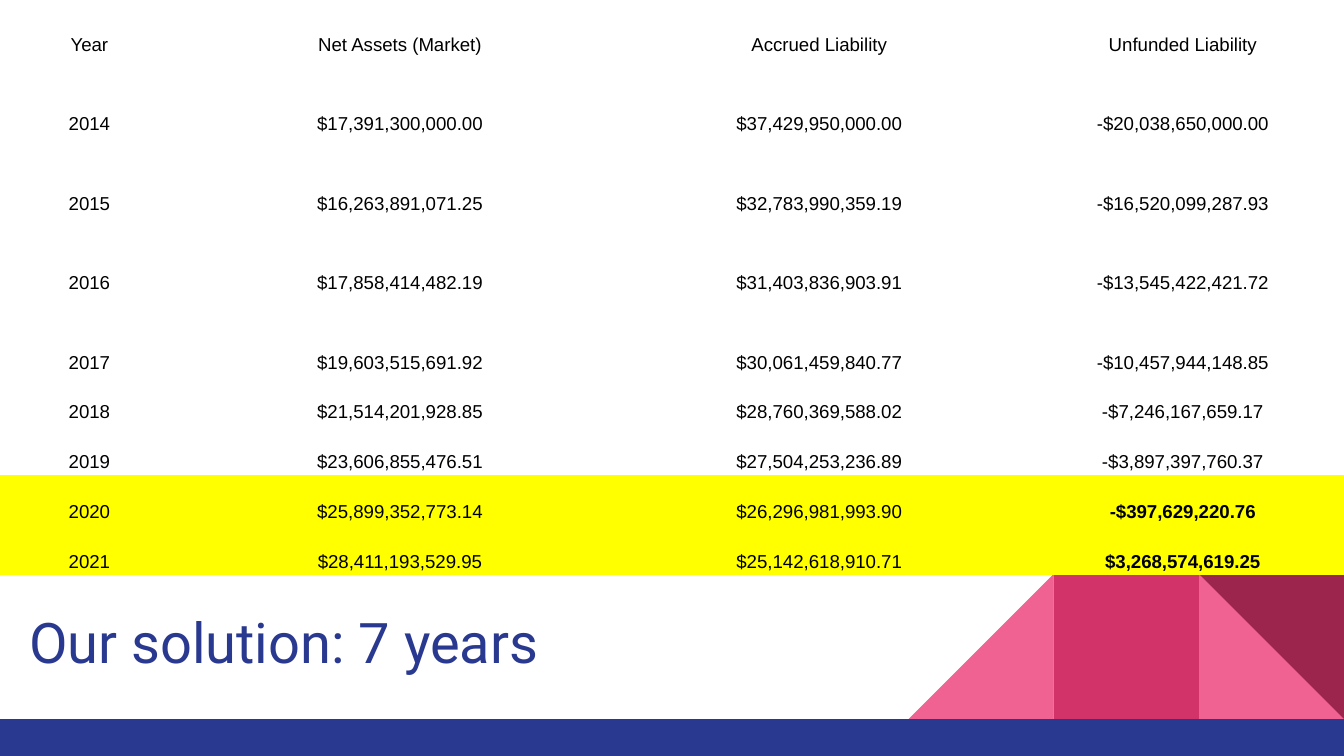
import pptx
import pptx.util
from pptx.dml.color import RGBColor
from pptx.enum.shapes import MSO_SHAPE
from pptx.enum.text import MSO_ANCHOR, PP_ALIGN
from pptx.util import Inches

COLORS = {
    "background": "FFFFFF",
    "navy": "2A3990",
    "pink": "F06292",
    "rose": "D23369",
    "wine": "9C254D",
    "highlight": "FFFF00",
    "text": "000000",
}
NO_STYLE_NO_GRID = "{2D5ABB26-0587-4C30-8999-92F81FD0307C}"
COLUMN_WIDTHS = [1.33, 3.29, 2.95, 2.46]
ROW_HEIGHTS = [0.37] + [0.59] * 4 + [0.37] * 4
ROWS = [
    ("Year", "Net Assets (Market)", "Accrued Liability", "Unfunded Liability"),
    ("2014", "$17,391,300,000.00", "$37,429,950,000.00", "-$20,038,650,000.00"),
    ("2015", "$16,263,891,071.25", "$32,783,990,359.19", "-$16,520,099,287.93"),
    ("2016", "$17,858,414,482.19", "$31,403,836,903.91", "-$13,545,422,421.72"),
    ("2017", "$19,603,515,691.92", "$30,061,459,840.77", "-$10,457,944,148.85"),
    ("2018", "$21,514,201,928.85", "$28,760,369,588.02", "-$7,246,167,659.17"),
    ("2019", "$23,606,855,476.51", "$27,504,253,236.89", "-$3,897,397,760.37"),
    ("2020", "$25,899,352,773.14", "$26,296,981,993.90", "-$397,629,220.76"),
    ("2021", "$28,411,193,529.95", "$25,142,618,910.71", "$3,268,574,619.25"),
]
HIGHLIGHTED_YEARS = ("2020", "2021")


def rgb(name):
    return RGBColor.from_string(COLORS[name])


def format_paragraph(paragraph, font_name, size, color, bold=False):
    for run in paragraph.runs:
        run.font.name = font_name
        run.font.size = pptx.util.Pt(size)
        run.font.bold = bold
        run.font.color.rgb = rgb(color)


def add_block(slide, kind, left, top, width, height, color):
    shape = slide.shapes.add_shape(
        kind, Inches(left), Inches(top), Inches(width), Inches(height))
    shape.shadow.inherit = False
    shape.fill.solid()
    shape.fill.fore_color.rgb = rgb(color)
    shape.line.fill.background()
    return shape


def add_footer(slide, left, top, width, height):
    """Row of three square blocks at the right, above a full-width bar."""
    side = 1.08
    right = left + width
    triangle, rectangle = MSO_SHAPE.RIGHT_TRIANGLE, MSO_SHAPE.RECTANGLE
    add_block(slide, triangle, right - side, top, side, side, "pink")
    # A quarter turn puts the right angle at the lower right
    rising = add_block(slide, triangle, right - 3 * side, top, side, side, "pink")
    rising.rotation = 270
    add_block(slide, rectangle, right - 2 * side, top, side, side, "rose")
    corner = add_block(slide, triangle, right - side, top, side, side, "wine")
    corner.rotation = 180
    add_block(slide, rectangle, left, top + side, width, height - side, "navy")


def add_title(slide, left, top, width, height):
    box = slide.shapes.add_textbox(
        Inches(left), Inches(top), Inches(width), Inches(height))
    frame = box.text_frame
    frame.word_wrap = True
    frame.vertical_anchor = MSO_ANCHOR.TOP
    frame.margin_left = frame.margin_right = Inches(0.1)
    frame.margin_top = frame.margin_bottom = Inches(0.1)
    frame.text = "Our solution: 7 years"
    format_paragraph(frame.paragraphs[0], "Roboto", 30, "navy")


def fill_cell(cell, text, highlighted, bold):
    cell.margin_left = cell.margin_right = Inches(0.03)
    cell.margin_top = cell.margin_bottom = Inches(0.02)
    cell.vertical_anchor = MSO_ANCHOR.BOTTOM
    if highlighted:
        cell.fill.solid()
        cell.fill.fore_color.rgb = rgb("highlight")
    else:
        cell.fill.background()
    paragraph = cell.text_frame.paragraphs[0]
    paragraph.text = text
    paragraph.alignment = PP_ALIGN.CENTER
    paragraph.line_spacing = 1.15
    format_paragraph(paragraph, "Arial", 10, "text", bold)


def add_liability_table(slide, left, top, width, height):
    frame = slide.shapes.add_table(
        len(ROWS), len(COLUMN_WIDTHS),
        Inches(left), Inches(top), Inches(width), Inches(height))
    table = frame.table
    table.first_row = table.horz_banding = False
    table._tbl.tblPr.find(pptx.oxml.ns.qn("a:tableStyleId")).text = NO_STYLE_NO_GRID
    for column, share in zip(table.columns, COLUMN_WIDTHS):
        column.width = Inches(width * share / sum(COLUMN_WIDTHS))
    for row, share in zip(table.rows, ROW_HEIGHTS):
        row.height = Inches(height * share / sum(ROW_HEIGHTS))
    for row, values in zip(table.rows, ROWS):
        highlighted = values[0] in HIGHLIGHTED_YEARS
        for index, (cell, text) in enumerate(zip(row.cells, values)):
            last = index == len(values) - 1
            fill_cell(cell, text, highlighted, highlighted and last)


def main():
    presentation = pptx.Presentation()
    # Widescreen, 16:9
    presentation.slide_width = Inches(10)
    presentation.slide_height = Inches(10 * 9 / 16)
    slide = presentation.slides.add_slide(presentation.slide_layouts[6])
    slide.background.fill.solid()
    slide.background.fill.fore_color.rgb = rgb("background")

    add_footer(slide, 0, 4.27, 10, 1.36)
    add_title(slide, 0.12, 4.42, 4.16, 0.66)
    add_liability_table(slide, 0, 0.06, 10.03, 4.22)
    presentation.save("out.pptx")


if __name__ == "__main__":
    main()
